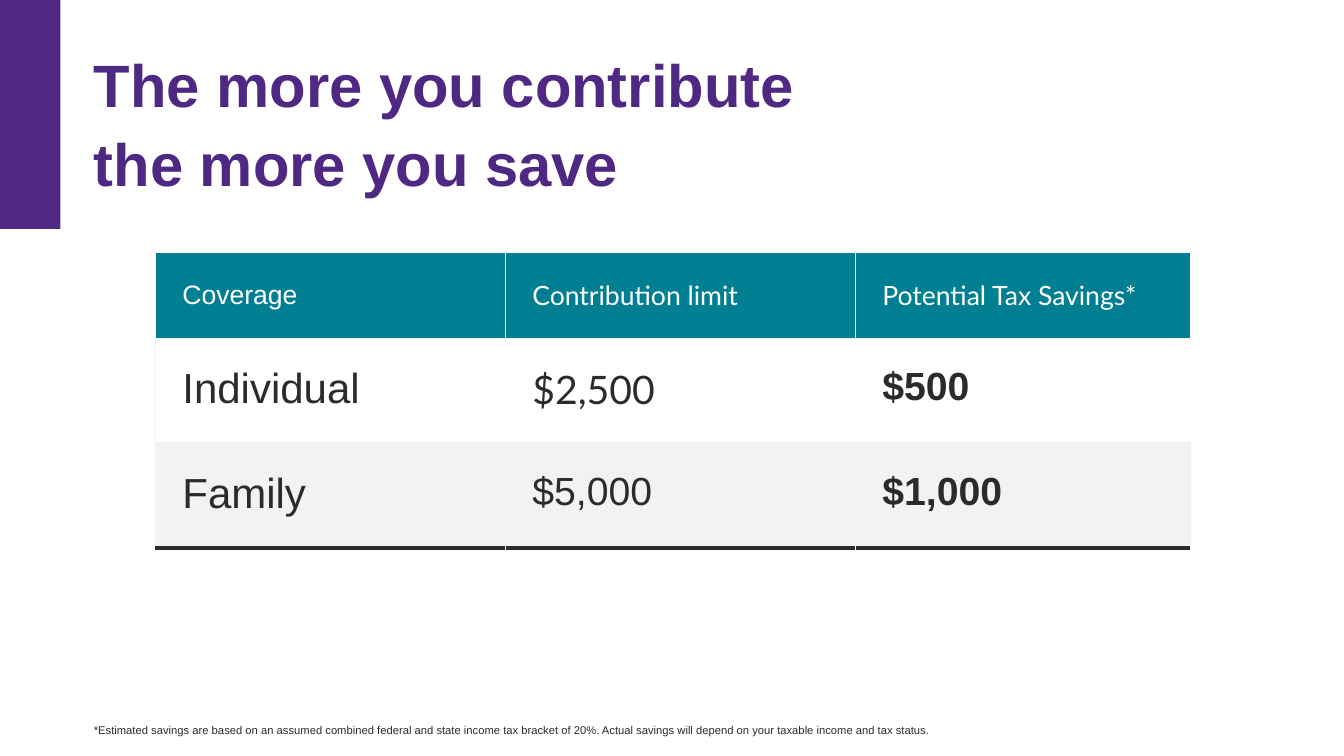
from dataclasses import dataclass

from lxml.etree import SubElement
from pptx import Presentation
from pptx.dml.color import RGBColor
from pptx.enum.shapes import MSO_SHAPE
from pptx.enum.text import MSO_ANCHOR
from pptx.oxml.ns import qn
from pptx.util import Pt


@dataclass(frozen=True)
class Theme:
    purple: str = "4F2883"
    teal: str = "007F93"
    ink: str = "2A2C2C"
    white: str = "FFFFFF"
    grey: str = "F2F2F2"
    sans: str = "Arial"
    accent: str = "Lato"
    title: float = 42.7
    header: float = 19
    coverage: float = 30
    amount: float = 28
    footnote: float = 8


class SlideBuilder:
    def __init__(self, slide, theme):
        self.slide = slide
        self.theme = theme

    def run(self, paragraph, words, size, color, font=None, bold=False):
        run = paragraph.add_run()
        run.text = words
        run.font.size = Pt(size)
        run.font.name = font or self.theme.sans
        run.font.bold = bold
        run.font.color.rgb = RGBColor.from_string(color)

    def bar(self, left, top, width, height, color):
        bar = self.slide.shapes.add_shape(
            MSO_SHAPE.RECTANGLE, Pt(left), Pt(top), Pt(width), Pt(height))
        bar.shadow.inherit = False
        bar.fill.solid()
        bar.fill.fore_color.rgb = RGBColor.from_string(color)
        bar.line.fill.background()

    def text(self, left, top, width, height, words, size, color, spacing, bold=False):
        box = self.slide.shapes.add_textbox(Pt(left), Pt(top), Pt(width), Pt(height))
        frame = box.text_frame
        frame.word_wrap = True
        frame.margin_left = frame.margin_right = 0
        frame.margin_top = frame.margin_bottom = 0
        paragraph = frame.paragraphs[0]
        paragraph.line_spacing = spacing
        self.run(paragraph, words, size, color, bold=bold)

    def table(self, left, top, widths, heights):
        table = self.slide.shapes.add_table(
            len(heights), len(widths), Pt(left), Pt(top),
            Pt(sum(widths)), Pt(sum(heights))).table
        table.horz_banding = False
        for column, width in zip(table.columns, widths):
            column.width = Pt(width)
        for row, height in zip(table.rows, heights):
            row.height = Pt(height)
        return table

    def cell(self, cell, words, fill, borders, anchor, inset, **style):
        cell.margin_left = cell.margin_right = Pt(inset)
        cell.margin_top = cell.margin_bottom = Pt(inset)
        cell.vertical_anchor = anchor
        properties = cell._tc.get_or_add_tcPr()
        for side, (color, weight) in zip("LRTB", borders):
            line = SubElement(properties, qn(f"a:ln{side}"), w=str(Pt(weight)))
            SubElement(SubElement(line, qn("a:solidFill")), qn("a:srgbClr"), val=color)
        cell.fill.solid()
        cell.fill.fore_color.rgb = RGBColor.from_string(fill)
        self.run(cell.text_frame.paragraphs[0], words, **style)


def main():
    theme = Theme()
    deck = Presentation()
    deck.slide_width, deck.slide_height = Pt(960), Pt(540)
    builder = SlideBuilder(deck.slides.add_slide(deck.slide_layouts[6]), theme)

    builder.bar(0, 0, 43.2, 163.6, theme.purple)
    builder.text(67, 28.8, 545, 109.4, "The more you contribute the more you save",
                 theme.title, theme.purple, 1.1, bold=True)

    white, grey, rule = (theme.white, 1), (theme.grey, 1), (theme.ink, 3)
    plain, accent = theme.sans, theme.accent
    rows = [
        (theme.teal, theme.white, MSO_ANCHOR.MIDDLE, (white, white, white, grey),
         (theme.header,) * 3,
         [("Coverage", plain), ("Contribution limit", accent),
          ("Potential Tax Savings*", accent)]),
        (theme.white, theme.ink, MSO_ANCHOR.TOP, (white, white, grey, grey),
         (theme.coverage, theme.amount, theme.amount),
         [("Individual", plain), ("$2,500", accent), ("$500", plain)]),
        (theme.grey, theme.ink, MSO_ANCHOR.TOP, (grey, grey, grey, rule),
         (theme.coverage, theme.amount, theme.amount),
         [("Family", plain), ("$5,000", plain), ("$1,000", plain)]),
    ]
    savings = builder.table(110.9, 180, (250, 250, 239.5), (60.7, 72, 72))
    for r, (fill, color, anchor, borders, sizes, entries) in enumerate(rows):
        for c, ((words, font), size) in enumerate(zip(entries, sizes)):
            sides = (grey, *borders[1:]) if (r, c) == (1, 0) else borders
            builder.cell(savings.cell(r, c), words, fill, sides, anchor, 19.4,
                         size=size, color=color, font=font, bold=r > 0 and c == 2)

    builder.text(67, 514.1, 846, 11.5,
                 "*Estimated savings are based on an assumed combined federal and state "
                 "income tax bracket of 20%. Actual savings will depend on your taxable "
                 "income and tax status.", theme.footnote, theme.ink, 1.3)
    deck.save("out.pptx")


if __name__ == "__main__":
    main()
